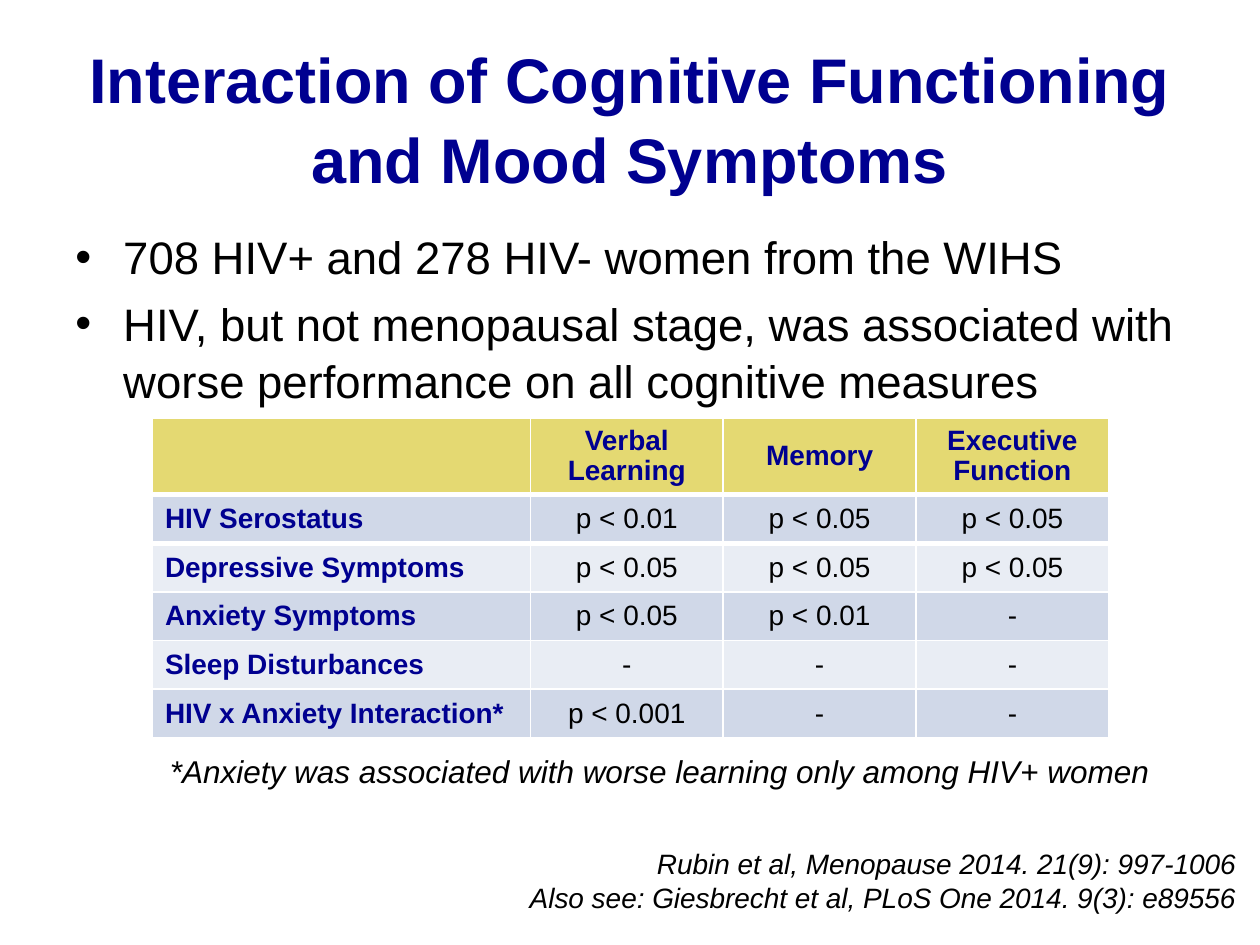
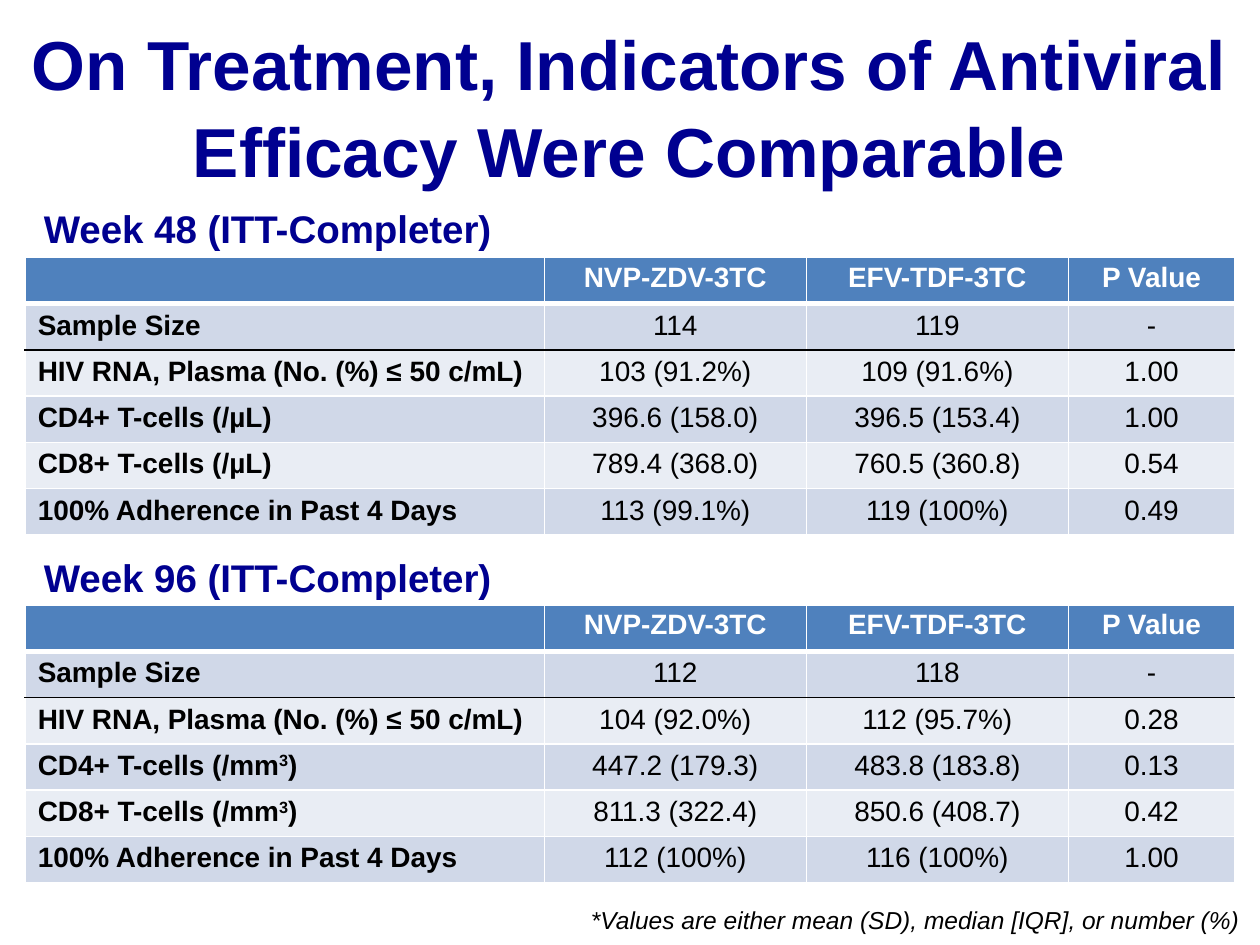
"""Builds two slides on cognition, mood and antiviral efficacy in HIV cohorts."""
from dataclasses import dataclass

from lxml import etree
from pptx import Presentation
from pptx import util as u
from pptx.dml.color import RGBColor
from pptx.enum import text as t
from pptx.oxml import ns

EMU_PER_PX = 9144
FONT = "Arial"
CELL_SIZE = 16
NAVY = RGBColor(0x00, 0x00, 0x90)
BLACK = RGBColor(0x00, 0x00, 0x00)
WHITE = RGBColor(0xFF, 0xFF, 0xFF)
GOLD = RGBColor(0xE4, 0xD9, 0x72)
BLUE = RGBColor(0x4F, 0x81, 0xBD)
BAND_DARK = RGBColor(0xD0, 0xD8, 0xE8)
BAND_LIGHT = RGBColor(0xE9, 0xED, 0xF4)

Box = tuple[int, int, int, int]
Parts = tuple[str, ...]
Row = tuple[str | Parts, ...]


@dataclass(frozen=True)
class Style:
    size: float
    color: RGBColor = BLACK
    bold: bool = False
    italic: bool = False


@dataclass(frozen=True)
class TextSpec:
    box: Box
    lines: Parts
    style: Style
    align: t.PP_ALIGN = t.PP_ALIGN.LEFT
    anchor: t.MSO_ANCHOR = t.MSO_ANCHOR.TOP
    wrap: bool = False
    spacing: float = 1.0
    bullet: bool = False


@dataclass(frozen=True)
class Rule:
    color: RGBColor = WHITE
    width: int = 1


THIN = Rule()
THICK = Rule(width=3)
BLACK_RULE = Rule(BLACK)


@dataclass(frozen=True)
class TableLook:
    head_fill: RGBColor
    head_color: RGBColor
    label_color: RGBColor
    anchor: t.MSO_ANCHOR
    first_row_rule: Rule
    cols: Parts | tuple[int, ...]
    head_height: int
    height: int


MOOD_LOOK = TableLook(GOLD, NAVY, NAVY, t.MSO_ANCHOR.MIDDLE, THICK,
                      (300, 153, 153, 153), 58, 251)
EFFICACY_LOOK = TableLook(BLUE, WHITE, BLACK, t.MSO_ANCHOR.TOP, BLACK_RULE,
                          (412, 208, 208, 132), 37, 220)

MOOD_ROWS: tuple[Row, ...] = (
    ("", "Verbal\nLearning", "Memory", "Executive Function"),
    ("HIV Serostatus", "p < 0.01", "p < 0.05", "p < 0.05"),
    ("Depressive Symptoms", "p < 0.05", "p < 0.05", "p < 0.05"),
    ("Anxiety Symptoms", "p < 0.05", "p < 0.01", "-"),
    ("Sleep Disturbances", "-", "-", "-"),
    ("HIV x Anxiety Interaction*", "p < 0.001", "-", "-"),
)
EFFICACY_HEAD: Row = ("", "NVP-ZDV-3TC", "EFV-TDF-3TC", "P Value")
RNA = "HIV RNA, Plasma (No. (%) ≤ 50 c/mL)"
ADHERENCE = "100% Adherence in Past 4 Days"
WEEK_48: tuple[Row, ...] = (
    EFFICACY_HEAD,
    ("Sample Size", "114", "119", "-"),
    (RNA, "103 (91.2%)", "109 (91.6%)", "1.00"),
    ("CD4+ T-cells (/µL)", "396.6 (158.0)", "396.5 (153.4)", "1.00"),
    ("CD8+ T-cells (/µL)", "789.4 (368.0)", "760.5 (360.8)", "0.54"),
    (ADHERENCE, "113 (99.1%)", "119 (100%)", "0.49"),
)
WEEK_96: tuple[Row, ...] = (
    EFFICACY_HEAD,
    ("Sample Size", "112", "118", "-"),
    (RNA, "104 (92.0%)", "112 (95.7%)", "0.28"),
    (("CD4+ T-cells (/mm", "3", ")"), "447.2 (179.3)", "483.8 (183.8)", "0.13"),
    (("CD8+ T-cells (/mm", "3", ")"), "811.3 (322.4)", "850.6 (408.7)", "0.42"),
    (ADHERENCE, "112 (100%)", "116 (100%)", "1.00"),
)


def px(n: float) -> u.Emu:
    """Turn px into EMU."""
    return u.Emu(int(n * EMU_PER_PX))


def add_run(p, content: str, style: Style, superscript: bool = False) -> None:
    """Append one styled run to a paragraph."""
    r = p.add_run()
    r.text = content
    f = r.font
    f.name, f.size, f.bold, f.italic = FONT, u.Pt(style.size), style.bold, style.italic
    f.color.rgb = style.color
    if superscript:
        f._element.set("baseline", "30000")


def add_bullet(p) -> None:
    """Give a paragraph a hanging round bullet."""
    ppr = p._p.get_or_add_pPr()
    ppr.set("marL", str(px(38)))
    ppr.set("indent", str(-px(38)))
    etree.SubElement(ppr, ns.qn("a:buFont"), typeface=FONT)
    etree.SubElement(ppr, ns.qn("a:buChar"), char="•")


def add_text(s, spec: TextSpec) -> None:
    """Draw a text box with one paragraph per line."""
    sp = s.shapes.add_textbox(*map(px, spec.box))
    tf = sp.text_frame
    tf.word_wrap, tf.vertical_anchor = spec.wrap, spec.anchor
    for i, line in enumerate(spec.lines):
        p = tf.add_paragraph() if i else tf.paragraphs[0]
        if spec.bullet:
            add_bullet(p)
        p.alignment, p.line_spacing = spec.align, spec.spacing
        if i and spec.bullet:
            p.space_before = u.Pt(spec.style.size * 0.2)
        add_run(p, line, spec.style)


def add_title(s, box: Box, title: str, size: float) -> None:
    """Draw the centred navy slide title."""
    add_text(s, TextSpec(box, (title,), Style(size, NAVY, bold=True),
                         t.PP_ALIGN.CENTER, t.MSO_ANCHOR.MIDDLE, True, 1.05))


def set_borders(cell, top: Rule, bottom: Rule) -> None:
    """Set the four borders of a cell, with thin white sides."""
    tcpr = cell._tc.get_or_add_tcPr()
    for side, rule in zip("LRTB", (THIN, THIN, top, bottom)):
        ln = etree.SubElement(tcpr, ns.qn(f"a:ln{side}"), w=str(u.Pt(rule.width)))
        fill = etree.SubElement(ln, ns.qn("a:solidFill"))
        etree.SubElement(fill, ns.qn("a:srgbClr"), val=str(rule.color))


def fill_cell(cell, content: str | Parts, style: Style, align: t.PP_ALIGN,
              spacing: float) -> None:
    """Write cell text; every second part of a tuple is superscript."""
    lines = [content] if isinstance(content, tuple) else [(x,) for x in content.split("\n")]
    tf = cell.text_frame
    for i, parts in enumerate(lines):
        p = tf.add_paragraph() if i else tf.paragraphs[0]
        p.alignment, p.line_spacing = align, spacing
        for k, part in enumerate(parts):
            if part:
                add_run(p, part, style, k % 2 == 1)
            else:
                etree.SubElement(p._p, ns.qn("a:endParaRPr"), sz=str(CELL_SIZE * 100))


def add_table(s, left: int, top: int, look: TableLook, rows: tuple[Row, ...]) -> None:
    """Draw a banded table with a header row and a bold label column."""
    tbl = s.shapes.add_table(len(rows), len(look.cols), px(left), px(top),
                             px(sum(look.cols)), px(look.height)).table
    tbl.first_row = tbl.horz_banding = False
    for col, width in zip(tbl.columns, look.cols):
        col.width = px(width)
    body_height = (look.height - look.head_height) / (len(rows) - 1)
    rules = [THIN, THICK, look.first_row_rule] + [THIN] * (len(rows) - 2)
    for i, row in enumerate(rows):
        head = i == 0
        tbl.rows[i].height = px(look.head_height if head else body_height)
        for j, content in enumerate(row):
            cell = tbl.cell(i, j)
            label = j == 0
            color = look.head_color if head else look.label_color if label else BLACK
            set_borders(cell, rules[i], rules[i + 1])
            cell.fill.solid()
            cell.fill.fore_color.rgb = (
                look.head_fill if head else BAND_DARK if i % 2 else BAND_LIGHT)
            cell.vertical_anchor = look.anchor
            fill_cell(cell, content, Style(CELL_SIZE, color, bold=head or label),
                      t.PP_ALIGN.LEFT if label else t.PP_ALIGN.CENTER,
                      0.95 if head else 1.0)


def build_mood_slide(s) -> None:
    """Draw the cognition and mood slide."""
    add_title(s, (50, 30, 900, 125),
              "Interaction of Cognitive Functioning and Mood Symptoms", 36)
    add_text(s, TextSpec(
        (50, 175, 900, 495),
        ("708 HIV+ and 278 HIV- women from the WIHS",
         "HIV, but not menopausal stage, was associated with worse performance "
         "on all cognitive measures"),
        Style(26), wrap=True, spacing=1.05, bullet=True))
    add_table(s, 121, 332, MOOD_LOOK, MOOD_ROWS)
    add_text(s, TextSpec(
        (125, 592, 807, 40),
        ("*Anxiety was associated with worse learning only among HIV+ women",),
        Style(18, italic=True)))
    add_text(s, TextSpec(
        (398, 667, 593, 64),
        ("Rubin et al, Menopause 2014. 21(9): 997-1006",
         "Also see: Giesbrecht et al, PLoS One 2014. 9(3): e89556"),
        Style(16, italic=True), t.PP_ALIGN.RIGHT))


def build_efficacy_slide(s) -> None:
    """Draw the antiviral efficacy slide."""
    add_title(s, (12, 20, 975, 125),
              "On Treatment, Indicators of Antiviral Efficacy Were Comparable", 39.6)
    for week, label_top, table_top, rows in ((48, 158, 204, WEEK_48),
                                             (96, 435, 480, WEEK_96)):
        add_text(s, TextSpec((25, label_top, 380, 47), (f"Week {week} (ITT-Completer)",),
                             Style(22, NAVY, bold=True)))
        add_table(s, 20, table_top, EFFICACY_LOOK, rows)
    add_text(s, TextSpec(
        (450, 713, 544, 34),
        ("*Values are either mean (SD), median [IQR], or number (%)",),
        Style(14, italic=True), t.PP_ALIGN.RIGHT))


def main() -> None:
    """Build and save the deck."""
    prs = Presentation()
    prs.slide_width, prs.slide_height = px(1000), px(750)
    for build in (build_mood_slide, build_efficacy_slide):
        build(prs.slides.add_slide(prs.slide_layouts[6]))
    prs.save("out.pptx")


if __name__ == "__main__":
    main()
